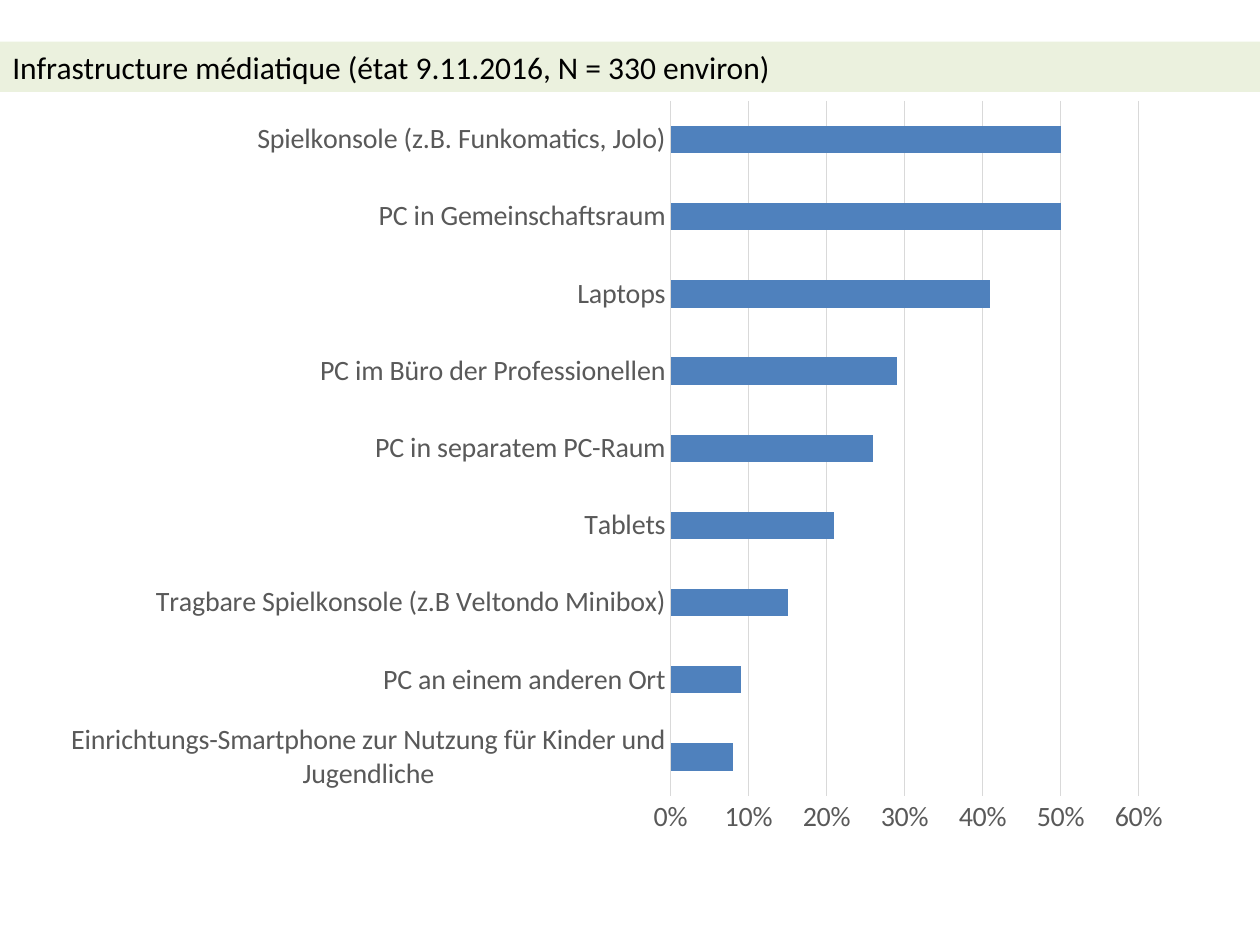
from lxml import etree
from pptx import Presentation
from pptx.chart.data import CategoryChartData
from pptx.dml.color import RGBColor
from pptx.enum import chart as ch, shapes, text
from pptx.oxml.ns import qn
from pptx.util import Inches, Pt

HEADING = "Infrastructure médiatique (état 9.11.2016, N = 330 environ)"
EQUIPMENT = [
    ("Einrichtungs-Smartphone zur Nutzung für Kinder und Jugendliche", 0.08),
    ("PC an einem anderen Ort", 0.09),
    ("Tragbare Spielkonsole (z.B Veltondo Minibox)", 0.15),
    ("Tablets", 0.21),
    ("PC in separatem PC-Raum", 0.26),
    ("PC im Büro der Professionellen", 0.29),
    ("Laptops", 0.41),
    ("PC in Gemeinschaftsraum", 0.5),
    ("Spielkonsole (z.B. Funkomatics, Jolo)", 0.5),
]
PLOT_AREA = {"x": 0.54, "y": 0.02, "w": 0.41, "h": 0.91}
FONT = "Calibri"
BLACK = RGBColor(0x00, 0x00, 0x00)
GREY = RGBColor(0x59, 0x59, 0x59)
LIGHT_GREY = RGBColor(0xD9, 0xD9, 0xD9)
BLUE = RGBColor(0x4F, 0x81, 0xBD)
PALE_GREEN = RGBColor(0xEB, 0xF1, 0xDE)


def style_font(font, size, color):
    font.name = FONT
    font.size = Pt(size)
    font.color.rgb = color


def style_line(line):
    line.color.rgb = LIGHT_GREY
    line.width = Pt(0.75)


def place_plot(chart):
    plot_area = chart._chartSpace.chart.plotArea
    for old in plot_area.findall(qn("c:layout")):
        plot_area.remove(old)
    layout = etree.Element(qn("c:layout"))
    manual = etree.SubElement(layout, qn("c:manualLayout"))
    settings = {"layoutTarget": "inner", "xMode": "edge", "yMode": "edge", **PLOT_AREA}
    for tag, value in settings.items():
        etree.SubElement(manual, qn(f"c:{tag}")).set("val", str(value))
    plot_area.insert(0, layout)


def add_equipment_chart(slide):
    data = CategoryChartData(number_format="0%")
    data.categories = [name for name, share in EQUIPMENT]
    data.add_series("Series 1", [share for name, share in EQUIPMENT])
    chart = slide.shapes.add_chart(
        ch.XL_CHART_TYPE.BAR_CLUSTERED,
        Inches(0.43), Inches(0.68), Inches(9.06), Inches(6.06), data).chart
    chart.has_title = False
    chart.has_legend = False
    style_font(chart.font, 16, BLACK)

    bars = chart.plots[0]
    bars.gap_width = 182
    bars.vary_by_categories = False
    fill = bars.series[0].format.fill
    fill.solid()
    fill.fore_color.rgb = BLUE

    names, shares = chart.category_axis, chart.value_axis
    for axis in (names, shares):
        axis.major_tick_mark = axis.minor_tick_mark = ch.XL_TICK_MARK.NONE
        style_font(axis.tick_labels.font, 16, GREY)
    names.has_major_gridlines = False
    style_line(names.format.line)
    shares.minimum_scale, shares.maximum_scale, shares.major_unit = 0, 0.6, 0.1
    shares.tick_labels.number_format = "0%"
    shares.tick_labels.number_format_is_linked = False
    shares.format.line.fill.background()
    shares.has_major_gridlines = True
    style_line(shares.major_gridlines.format.line)
    place_plot(chart)


def add_heading(slide):
    band = slide.shapes.add_shape(
        shapes.MSO_SHAPE.RECTANGLE, 0, Inches(0.33), Inches(10), Inches(0.4))
    band.shadow.inherit = False
    band.fill.solid()
    band.fill.fore_color.rgb = PALE_GREEN
    band.line.fill.background()
    frame = band.text_frame
    frame.text = HEADING
    frame.word_wrap = True
    frame.auto_size = text.MSO_AUTO_SIZE.SHAPE_TO_FIT_TEXT
    frame.vertical_anchor = text.MSO_ANCHOR.TOP
    paragraph = frame.paragraphs[0]
    paragraph.alignment = text.PP_ALIGN.LEFT
    style_font(paragraph.runs[0].font, 18, BLACK)


def main():
    deck = Presentation()
    deck.slide_width, deck.slide_height = Inches(10), Inches(7.5)
    slide = deck.slides.add_slide(deck.slide_layouts[6])
    add_equipment_chart(slide)
    add_heading(slide)
    deck.save("out.pptx")


if __name__ == "__main__":
    main()
